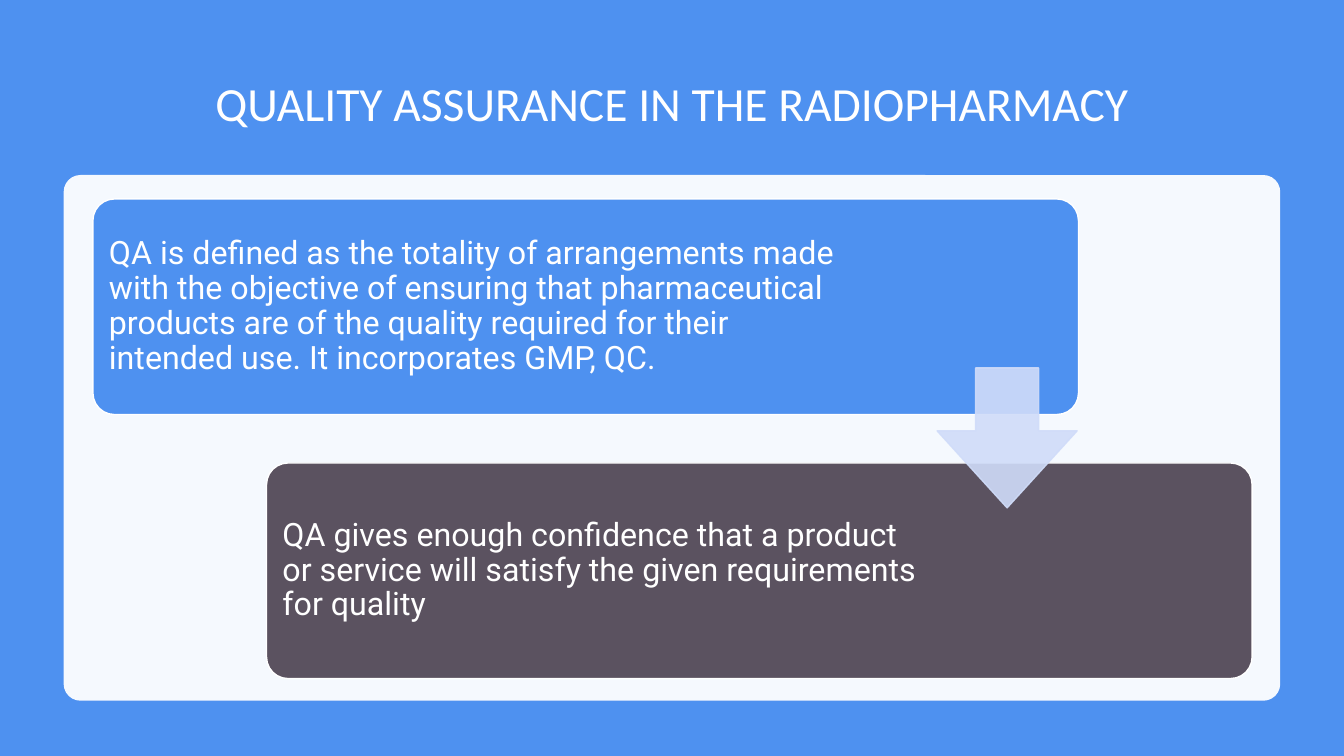
"""Build the slide on quality assurance in the radiopharmacy."""
from dataclasses import dataclass

from lxml.etree import SubElement
from pptx import Presentation
from pptx.dml.color import RGBColor
from pptx.dml.fill import FillFormat
from pptx.enum.shapes import MSO_SHAPE as Preset
from pptx.enum.text import MSO_ANCHOR as Anchor, PP_ALIGN as Align
from pptx.oxml.ns import qn
from pptx.shapes.autoshape import Shape
from pptx.slide import Slide
from pptx.text.text import TextFrame
from pptx.util import Pt

BLUE, PLUM, PALE, WHITE = "4E91F0", "5B5260", "D0DCF9", "FFFFFF"
CARD_WIDTH, CARD_HEIGHT, CARD_PADDING = 704, 154, 4.4


@dataclass(frozen=True)
class Card:
    left: float
    top: float
    color: str
    text_width: float
    text: str


CARDS = [
    Card(66.4, 142.1, BLUE, 544.3,
         "QA is defined as the totality of arrangements made with the objective of "
         "ensuring that pharmaceutical products are of the quality required for their "
         "intended use. It incorporates GMP, QC."),
    Card(190.4, 330.7, PLUM, 470.2,
         "QA gives enough confidence that a product or service will satisfy the given "
         "requirements for quality"),
]


def paint(fill: FillFormat, color: str, opacity: int = 100) -> None:
    fill.solid()
    fill.fore_color.rgb = RGBColor.from_string(color)
    if opacity < 100:
        for node in fill._xPr.iter(qn("a:srgbClr")):
            SubElement(node, qn("a:alpha"), val=str(opacity * 1000))


def add_block(page: Slide, preset: Preset, place: tuple[float, ...],
              adjustments: tuple[float, ...], color: str,
              line: str | None = None, opacity: int = 100) -> Shape:
    block = page.shapes.add_shape(preset, *map(Pt, place))
    block.shadow.inherit = False
    for index, value in enumerate(adjustments):
        block.adjustments[index] = value
    paint(block.fill, color, opacity)
    if line:
        block.line.width = Pt(1)
        paint(block.line.fill, line, opacity)
    else:
        block.line.fill.background()
    return block


def write(frame: TextFrame, text: str, font: str, size: float, align: Align) -> None:
    frame.word_wrap = True
    frame.vertical_anchor = Anchor.MIDDLE
    para = frame.paragraphs[0]
    para.alignment = align
    para.line_spacing = 0.9
    span = para.add_run()
    span.text = text
    for name, value in {"name": font, "size": Pt(size), "bold": False}.items():
        setattr(span.font, name, value)
    paint(span.font.fill, WHITE)


def add_card(page: Slide, card: Card) -> None:
    add_block(page, Preset.ROUNDED_RECTANGLE,
              (card.left, card.top, CARD_WIDTH, CARD_HEIGHT), (0.1,), card.color, WHITE)
    box = page.shapes.add_textbox(
        Pt(card.left + CARD_PADDING), Pt(card.top + CARD_PADDING),
        Pt(card.text_width), Pt(CARD_HEIGHT - 2 * CARD_PADDING))
    for side in ("left", "top", "right", "bottom"):
        setattr(box.text_frame, f"margin_{side}", Pt(7))
    write(box.text_frame, card.text, "Roboto", 23, Align.LEFT)


def main() -> None:
    deck = Presentation()
    deck.slide_width, deck.slide_height = Pt(960), Pt(540)
    page = deck.slides.add_slide(deck.slide_layouts[5])
    paint(page.background.fill, BLUE)

    title = page.shapes.title
    place = {"left": 66, "top": 36, "width": 828, "height": 79}
    for name, value in place.items():
        setattr(title, name, Pt(value))
    write(title.text_frame, "QUALITY ASSURANCE IN THE RADIOPHARMACY",
          "Calibri", 34, Align.CENTER)

    add_block(page, Preset.ROUNDED_RECTANGLE, (45.5, 125, 869, 375.5), (0.032,),
              WHITE, opacity=95)
    for card in CARDS:
        add_card(page, card)
    add_block(page, Preset.DOWN_ARROW, (669.4, 262.8, 100, 100), (0.45, 0.55),
              PALE, PALE, opacity=90)
    deck.save("out.pptx")


if __name__ == "__main__":
    main()
